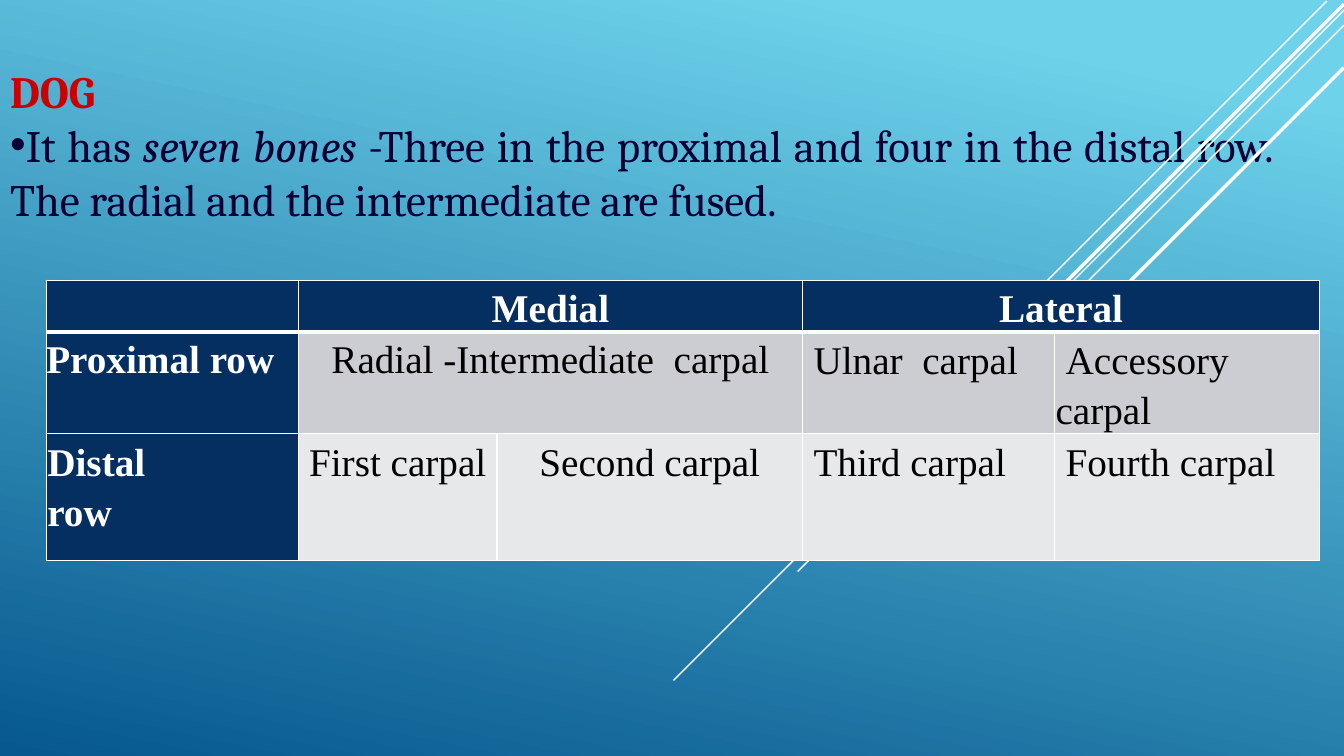
from lxml import etree
from pptx import Presentation
from pptx.dml.color import RGBColor
from pptx.enum.shapes import MSO_CONNECTOR
from pptx.enum.text import MSO_ANCHOR, MSO_AUTO_SIZE, PP_ALIGN
from pptx.oxml.ns import qn
from pptx.util import Inches, Pt

COLORS = {
    "sky": "6ED2EB", "deep": "06588E", "white": "FFFFFF", "black": "000000",
    "navy": "052F61", "gray": "CCCDD2", "pale": "E7E8EA",
    "red": "CD0000", "ink": "000033",
}
RAYS = [
    (13.16, 0.01, 4.16, 1), (13.33, 0.1, 6.65, 1), (13.33, 0.25, 5.42, 1),
    (13.33, 0.04, 5.31, 2.5), (13.33, 0.67, 4.75, 2.5),
]
COLUMNS = [2.5, 1.97, 3.03, 2.5, 2.63]
ROWS = [0.43, 0.85, 1.26]
BODY_FILLS = ["navy", "gray", "pale"]
MERGES = [(0, 1), (0, 3), (1, 1)]
CARPALS = [
    ["", "Medial", "", "Lateral", ""],
    ["Proximal row", "Radial -Intermediate  carpal", "", "Ulnar  carpal", "Accessory carpal"],
    ["Distal\vrow", "First carpal", "Second carpal", "Third carpal", "Fourth carpal"],
]


def color(name):
    """Return the named colour."""
    return RGBColor.from_string(COLORS[name])


def paint_background(page):
    """Fill the page with the blue gradient."""
    fill = page.background.fill
    fill.gradient()
    fill.gradient_angle = 258
    for stop, position, name in zip(fill.gradient_stops, (0.1, 1), ("sky", "deep")):
        stop.position = position
        stop.color.rgb = color(name)


def add_ray(page, left, top, run, width):
    """Draw a white diagonal going down to the left."""
    ray = page.shapes.add_connector(
        MSO_CONNECTOR.STRAIGHT, Inches(left), Inches(top),
        Inches(left - run), Inches(top + run))
    ray.line.color.rgb = color("white")
    ray.line.width = Pt(width)
    etree.SubElement(ray._element.spPr, qn("a:effectLst"))


def add_border(cell, side, width):
    """Give one side of a cell a white border."""
    line = etree.SubElement(cell._tc.get_or_add_tcPr(), qn(f"a:ln{side}"), w=str(Pt(width)))
    fill = etree.SubElement(line, qn("a:solidFill"))
    etree.SubElement(fill, qn("a:srgbClr"), val=COLORS["white"])


def format_cell(cell, row, column):
    """Set the borders, fill and text of a cell."""
    for side in "LRTB":
        thick = (row, side) in ((0, "B"), (1, "T"))
        add_border(cell, side, 3 if thick else 1)
    heading = row == 0 or column == 0
    cell.fill.solid()
    cell.fill.fore_color.rgb = color("navy" if heading else BODY_FILLS[row])
    inset = Inches(0 if row == 1 and column < 3 else 0.01)
    cell.margin_left = cell.margin_right = cell.margin_top = cell.margin_bottom = inset
    para = cell.text_frame.paragraphs[0]
    para.text = CARPALS[row][column]
    para.line_spacing = 1.15
    para.space_after = Pt(10)
    centered = row == 0 or column in (1, 2)
    para.alignment = PP_ALIGN.CENTER if centered else PP_ALIGN.LEFT
    if row and column > 2:
        para._p.get_or_add_pPr().set("indent", str(Inches(0.1)))
    font = para.font
    font.name, font.size, font.bold = "Times New Roman", Pt(28), heading
    font.color.rgb = color("white" if heading else "black")


def add_carpal_table(page):
    """Add the table of carpal bones."""
    table = page.shapes.add_table(
        len(ROWS), len(COLUMNS), Inches(0.46), Inches(2.78),
        Inches(sum(COLUMNS)), Inches(sum(ROWS))).table
    for column, width in zip(table.columns, COLUMNS):
        column.width = Inches(width)
    for row, height in zip(table.rows, ROWS):
        row.height = Inches(height)
    for row, texts in enumerate(CARPALS):
        for column in range(len(texts)):
            format_cell(table.cell(row, column), row, column)
    for row, column in MERGES:
        table.cell(row, column).merge(table.cell(row, column + 1))


def style_para(para, name, bold, bullet=None):
    """Justify a paragraph and set its bullet and font."""
    para.alignment = PP_ALIGN.JUSTIFY
    para.line_spacing = Pt(38.5)
    para.space_before = para.space_after = Pt(0)
    properties = para._p.get_or_add_pPr()
    properties.set("marL", "0")
    properties.set("indent", "0")
    if bullet:
        etree.SubElement(properties, qn("a:buChar"), char=bullet)
    else:
        etree.SubElement(properties, qn("a:buNone"))
    font = para.font
    font.name, font.size, font.bold = "Cambria", Pt(32), bold
    font.color.rgb = color(name)


def write_description(page):
    """Write the animal's name and its carpal count in the subtitle."""
    box = page.placeholders[1]
    box.left, box.top = Inches(0), Inches(0.58)
    box.width, box.height = Inches(12.73), Inches(1.7)
    frame = box.text_frame
    frame.word_wrap = True
    frame.auto_size = MSO_AUTO_SIZE.NONE
    frame.vertical_anchor = MSO_ANCHOR.TOP
    animal = frame.paragraphs[0]
    animal.text = "DOG"
    style_para(animal, "red", True)
    count = frame.add_paragraph()
    style_para(count, "ink", False, "•")
    for text, italic in (
            ("It has ", False), ("seven bones ", True),
            ("-Three in the proximal and four in the distal row. "
             "The radial and the intermediate are fused.", False)):
        span = count.add_run()
        span.text = text
        span.font.italic = italic


def main():
    """Build the slide and save it."""
    deck = Presentation()
    deck.slide_width, deck.slide_height = Inches(13.33), Inches(7.5)
    page = deck.slides.add_slide(deck.slide_layouts[0])
    title = page.shapes.title._element
    title.getparent().remove(title)
    paint_background(page)
    for ray in RAYS:
        add_ray(page, *ray)
    add_carpal_table(page)
    write_description(page)
    deck.save("out.pptx")


if __name__ == "__main__":
    main()
